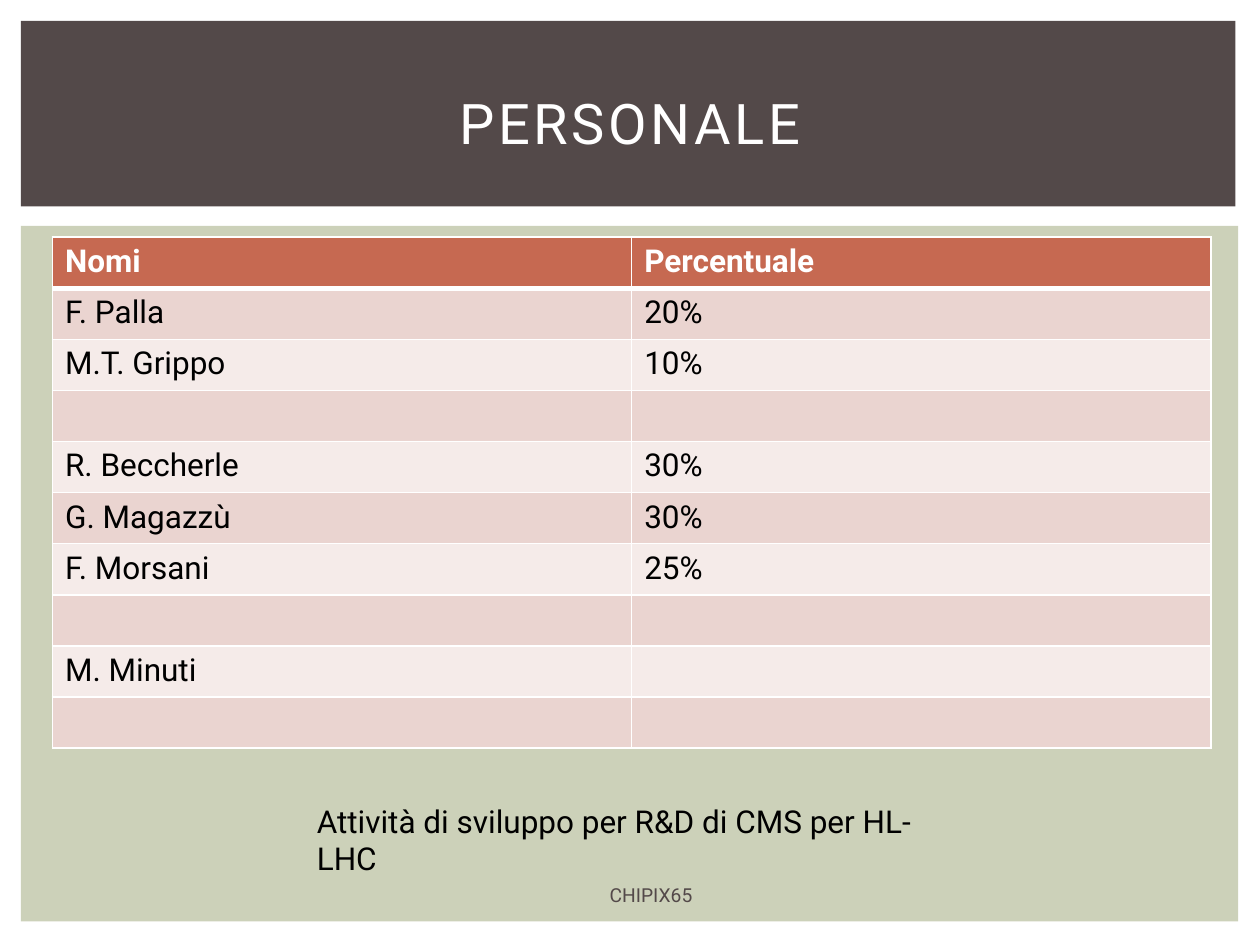
from dataclasses import dataclass

from lxml import etree
from pptx import Presentation
from pptx.dml.color import RGBColor
from pptx.enum.shapes import MSO_SHAPE
from pptx.enum.text import MSO_ANCHOR, PP_ALIGN
from pptx.oxml.ns import qn
from pptx.util import Pt

RECT = MSO_SHAPE.RECTANGLE
TOP, MIDDLE = MSO_ANCHOR.TOP, MSO_ANCHOR.MIDDLE
LEFT, CENTER = PP_ALIGN.LEFT, PP_ALIGN.CENTER


@dataclass(frozen=True)
class Theme:
    font: str = "Roboto"
    dark: str = "534949"
    sage: str = "CCD1B9"
    head: str = "C66951"
    odd: str = "EAD4D0"
    even: str = "F5EBE9"
    white: str = "FFFFFF"
    black: str = "000000"
    title: int = 32
    body: int = 18
    foot: int = 11


class Deck:
    def __init__(self, theme):
        self.theme = theme
        self.prs = Presentation()
        self.prs.slide_width, self.prs.slide_height = Pt(720), Pt(540)
        self.slide = self.prs.slides.add_slide(self.prs.slide_layouts[6])

    def panel(self, box, color):
        shape = self.slide.shapes.add_shape(RECT, *map(Pt, box))
        shape.shadow.inherit = False
        shape.fill.solid()
        shape.fill.fore_color.rgb = RGBColor.from_string(color)
        shape.line.fill.background()

    def add_text(self, para, text, size, color, bold=False, gap=0):
        run = para.add_run()
        run.text = text
        font = run.font
        font.name, font.size, font.bold = self.theme.font, Pt(size), bold
        font.color.rgb = RGBColor.from_string(color)
        if gap:
            run._r.get_or_add_rPr().set("spc", str(gap * 100))

    def label(self, box, text, size, color, align=LEFT, anchor=TOP, gap=0):
        frame = self.slide.shapes.add_textbox(*map(Pt, box)).text_frame
        frame.word_wrap = True
        frame.vertical_anchor = anchor
        para = frame.paragraphs[0]
        para.alignment = align
        self.add_text(para, text, size, color, gap=gap)

    def border(self, cell, widths):
        # Cell lines must come before the fill
        props = cell._tc.get_or_add_tcPr()
        for spot, (side, width) in enumerate(widths.items()):
            line = etree.Element(qn(f"a:ln{side}"), w=str(Pt(width)))
            fill = etree.SubElement(line, qn("a:solidFill"))
            etree.SubElement(fill, qn("a:srgbClr"), val=self.theme.white)
            props.insert(spot, line)

    def table(self, box, rows):
        theme = self.theme
        grid = self.slide.shapes.add_table(
            len(rows), len(rows[0]), *map(Pt, box)).table
        for row in grid.rows:
            row.height = Pt(box[3] / len(rows))
        for r, row in enumerate(rows):
            first = r == 0
            fill = theme.head if first else (theme.even, theme.odd)[r % 2]
            color = theme.white if first else theme.black
            widths = {"L": 1, "R": 1, "T": 3 if r == 1 else 1,
                      "B": 3 if first else 1}
            for c, text in enumerate(row):
                cell = grid.cell(r, c)
                cell.fill.solid()
                cell.fill.fore_color.rgb = RGBColor.from_string(fill)
                self.border(cell, widths)
                if text:
                    self.add_text(cell.text_frame.paragraphs[0], text,
                                  theme.body, color, bold=first)


STAFF = [
    ("Nomi", "Percentuale"),
    ("F. Palla", "20%"),
    ("M.T. Grippo", "10%"),
    ("", ""),
    ("R. Beccherle", "30%"),
    ("G. Magazzù", "30%"),
    ("F. Morsani", "25%"),
    ("", ""),
    ("M. Minuti", ""),
    ("", ""),
]


def main():
    theme = Theme()
    deck = Deck(theme)

    # Background panels
    deck.panel((12, 129, 695.5, 397.5), theme.sage)
    deck.panel((12, 12, 694, 106), theme.dark)

    # Staff table
    deck.table((30, 135.5, 662, 292), STAFF)

    # Footer, title and note
    deck.label((240, 500.5, 264, 21.5), "CHIPIX65", theme.foot, theme.dark,
               CENTER, MIDDLE)
    deck.label((30, 28, 660, 83), "PERSONALE", theme.title, theme.white,
               CENTER, MIDDLE, gap=2)
    deck.label((174, 454.5, 379, 29),
               "Attività di sviluppo per R&D di CMS per HL-LHC",
               theme.body, theme.black)

    deck.prs.save("out.pptx")


if __name__ == "__main__":
    main()
